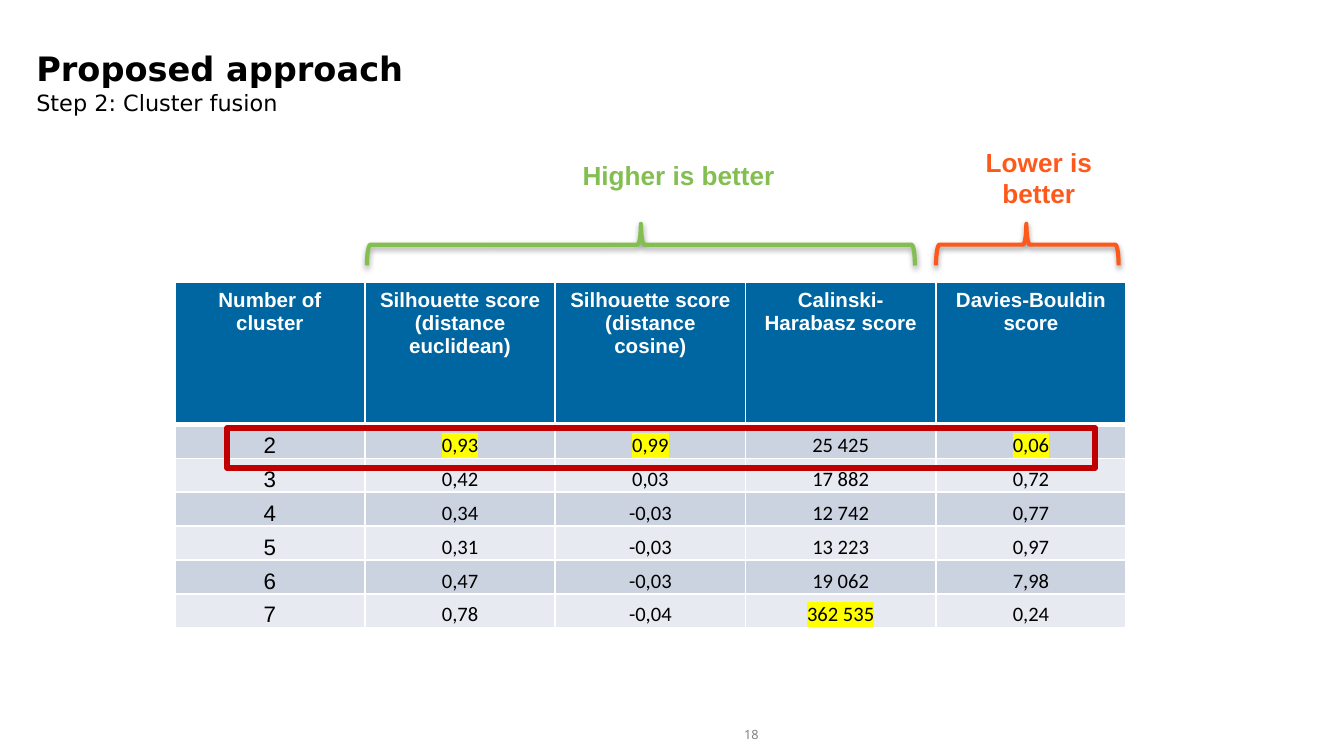
import dataclasses
import typing

import lxml.etree
import pptx
import pptx.dml.color
import pptx.enum.shapes
import pptx.enum.text
import pptx.oxml
import pptx.oxml.ns
import pptx.util

WIDE = 10
HIGH = WIDE * 9 / 16
BLUE, GREEN, RUST, RED = "0066A1", "83BE50", "FE581A", "C00000"
BANDS = ("CCD3E0", "E7EAF0")
WHITE, BLACK, GREY, MARK = "FFFFFF", "000000", "818181", "FFFF00"
ALIGN = pptx.enum.text.PP_ALIGN
ANCHOR = pptx.enum.text.MSO_ANCHOR
SHAPE = pptx.enum.shapes.MSO_SHAPE
NS = 'xmlns:a="http://schemas.openxmlformats.org/drawingml/2006/main"'

HEADS = ("Number of cluster", "Silhouette score (distance euclidean)",
         "Silhouette score (distance cosine)", "Calinski-Harabasz score",
         "Davies-Bouldin score")
SCORES = (
    ("2", "0,93", "0,99", "25 425", "0,06"),
    ("3", "0,42", "0,03", "17 882", "0,72"),
    ("4", "0,34", "-0,03", "12 742", "0,77"),
    ("5", "0,31", "-0,03", "13 223", "0,97"),
    ("6", "0,47", "-0,03", "19 062", "7,98"),
    ("7", "0,78", "-0,04", "362 535", "0,24"),
)
BEST = {"0,93", "0,99", "0,06", "362 535"}

LEFT, TOP, SPAN, TALL = 1.3, 2.1, 7.08, 2.57
HEAD = 1.06
COL = SPAN / len(HEADS)
ROW = (TALL - HEAD) / len(SCORES)


@dataclasses.dataclass(frozen=True)
class Box:
    left: float
    top: float
    wide: float
    high: float

    def place(self) -> list[int]:
        sides = (self.left * WIDE, self.top * HIGH, self.wide * WIDE, self.high * HIGH)
        return [pptx.util.Inches(side / 100) for side in sides]


@dataclasses.dataclass(frozen=True)
class Style:
    size: float
    name: str
    color: str
    bold: bool = False


@dataclasses.dataclass(frozen=True)
class Brace:
    start: float
    span: float
    color: str
    tip: float


@dataclasses.dataclass(frozen=True)
class Label:
    text: str
    box: Box
    style: Style
    space: tuple[float, float] = (0.1, 0.05)


BRACES = (Brace(1.01, 2.88, GREEN, 0.5), Brace(4, 0.96, RUST, 0.495))
LABELS = (
    Label("Higher is better", Box(37.1, 20.1, 26.8, 6), Style(14, "Arial", GREEN, True)),
    Label("Lower is better", Box(70.8, 18.4, 13, 10.1), Style(14, "Arial", RUST, True)),
    Label("18", Box(52.5, 95.3, 6.8, 3.56), Style(6.8, "Noto Sans", GREY), (0.08, 0.04)),
)


def hue(code: str) -> pptx.dml.color.RGBColor:
    return pptx.dml.color.RGBColor.from_string(code)


def format_run(run: typing.Any, style: Style) -> None:
    run.font.size = pptx.util.Pt(style.size)
    run.font.name = style.name
    run.font.bold = style.bold
    run.font.color.rgb = hue(style.color)


def mark_run(run: typing.Any) -> None:
    fill = run.font._element.find(pptx.oxml.ns.qn("a:solidFill"))
    fill.addnext(pptx.oxml.parse_xml(
        f'<a:highlight {NS}><a:srgbClr val="{MARK}"/></a:highlight>'))


def set_insets(item: typing.Any, sides: tuple[float, float, float, float]) -> None:
    (item.margin_left, item.margin_top,
     item.margin_right, item.margin_bottom) = map(pptx.util.Inches, sides)


def edge_cell(cell: typing.Any, base: float) -> None:
    props = cell._tc.get_or_add_tcPr()
    edges = (("lnL", 1), ("lnR", 1), ("lnT", 1), ("lnB", base))
    for spot, (tag, width) in enumerate(edges):
        props.insert(spot, pptx.oxml.parse_xml(
            f'<a:{tag} {NS} w="{pptx.util.Pt(width)}"><a:solidFill>'
            f'<a:srgbClr val="{WHITE}"/></a:solidFill></a:{tag}>'))


def fill_cell(cell: typing.Any, text: str, style: Style, fill: str, base: float) -> None:
    cell.text_frame.text = text
    para = cell.text_frame.paragraphs[0]
    para.alignment = ALIGN.CENTER
    format_run(para.runs[0], style)
    cell.fill.solid()
    cell.fill.fore_color.rgb = hue(fill)
    edge_cell(cell, base)


def draw_title(slide: typing.Any) -> None:
    title = slide.shapes.title
    title.left, title.top, title.width, title.height = Box(1.7, 5.5, 95.5, 11).place()
    frame = title.text_frame
    frame.text = "Proposed approach\vStep 2: Cluster fusion"
    frame.auto_size = pptx.enum.text.MSO_AUTO_SIZE.NONE
    frame.vertical_anchor = ANCHOR.TOP
    para = frame.paragraphs[0]
    para.alignment = ALIGN.LEFT
    format_run(para.runs[0], Style(18, "DejaVu Sans", BLACK, True))
    format_run(para.runs[1], Style(12, "DejaVu Sans", BLACK))


def draw_table(slide: typing.Any) -> None:
    sides = map(pptx.util.Inches, (LEFT, TOP, SPAN, TALL))
    table = slide.shapes.add_table(len(SCORES) + 1, len(HEADS), *sides).table
    for col in table.columns:
        col.width = pptx.util.Inches(COL)
    for num, row in enumerate(table.rows):
        row.height = pptx.util.Inches(ROW if num else HEAD)
    for col, text in enumerate(HEADS):
        fill_cell(table.cell(0, col), text, Style(11, "Arial", WHITE, True), BLUE, 3)
    for num, scores in enumerate(SCORES):
        for col, text in enumerate(scores):
            cell = table.cell(num + 1, col)
            style = Style(11, "Calibri", BLACK) if col else Style(12, "Arial", BLACK)
            fill_cell(cell, text, style, BANDS[num % 2], 1)
            cell.vertical_anchor = ANCHOR.BOTTOM
            set_insets(cell, (0.01, 0.01, 0.01, 0))
            if text in BEST:
                mark_run(cell.text_frame.paragraphs[0].runs[0])


def draw_outline(slide: typing.Any, kind: typing.Any, place: list[int],
                 color: str, width: float) -> typing.Any:
    shape = slide.shapes.add_shape(kind, *place)
    shape.shadow.inherit = False
    shape.fill.background()
    shape.line.color.rgb = hue(color)
    shape.line.width = pptx.util.Pt(width)
    return shape


def draw_brace(slide: typing.Any, brace: Brace) -> None:
    thick, span = 0.31, brace.span * COL
    mid = LEFT + brace.start * COL + span / 2
    sides = (mid - thick / 2, TOP - 0.28 - span / 2, thick, span)
    place = [pptx.util.Inches(side) for side in sides]
    shape = draw_outline(slide, SHAPE.RIGHT_BRACE, place, brace.color, 2.25)
    shape.rotation = 270
    shape.adjustments[0], shape.adjustments[1] = 0.083, brace.tip
    glow = shape._element.spPr.find(pptx.oxml.ns.qn("a:effectLst"))
    glow.append(pptx.oxml.parse_xml(
        f'<a:outerShdw {NS} blurRad="{pptx.util.Pt(3.1)}" dist="{pptx.util.Pt(1.6)}" '
        f'dir="5400000" rotWithShape="0"><a:srgbClr val="{BLACK}">'
        '<a:alpha val="38000"/></a:srgbClr></a:outerShdw>'))


def draw_label(slide: typing.Any, label: Label) -> None:
    frame = slide.shapes.add_textbox(*label.box.place()).text_frame
    frame.word_wrap = True
    frame.vertical_anchor = ANCHOR.MIDDLE
    set_insets(frame, label.space * 2)
    frame.text = label.text
    para = frame.paragraphs[0]
    para.alignment = ALIGN.CENTER
    format_run(para.runs[0], label.style)


def main() -> None:
    deck = pptx.Presentation()
    deck.slide_width = pptx.util.Inches(WIDE)
    deck.slide_height = pptx.util.Inches(HIGH)
    slide = deck.slides.add_slide(deck.slide_layouts[5])
    draw_title(slide)
    draw_table(slide)
    draw_outline(slide, SHAPE.RECTANGLE, Box(16.9, 56.6, 64.6, 5.3).place(), RED, 3)
    for brace in BRACES:
        draw_brace(slide, brace)
    for label in LABELS:
        draw_label(slide, label)
    deck.save("out.pptx")


if __name__ == "__main__":
    main()
